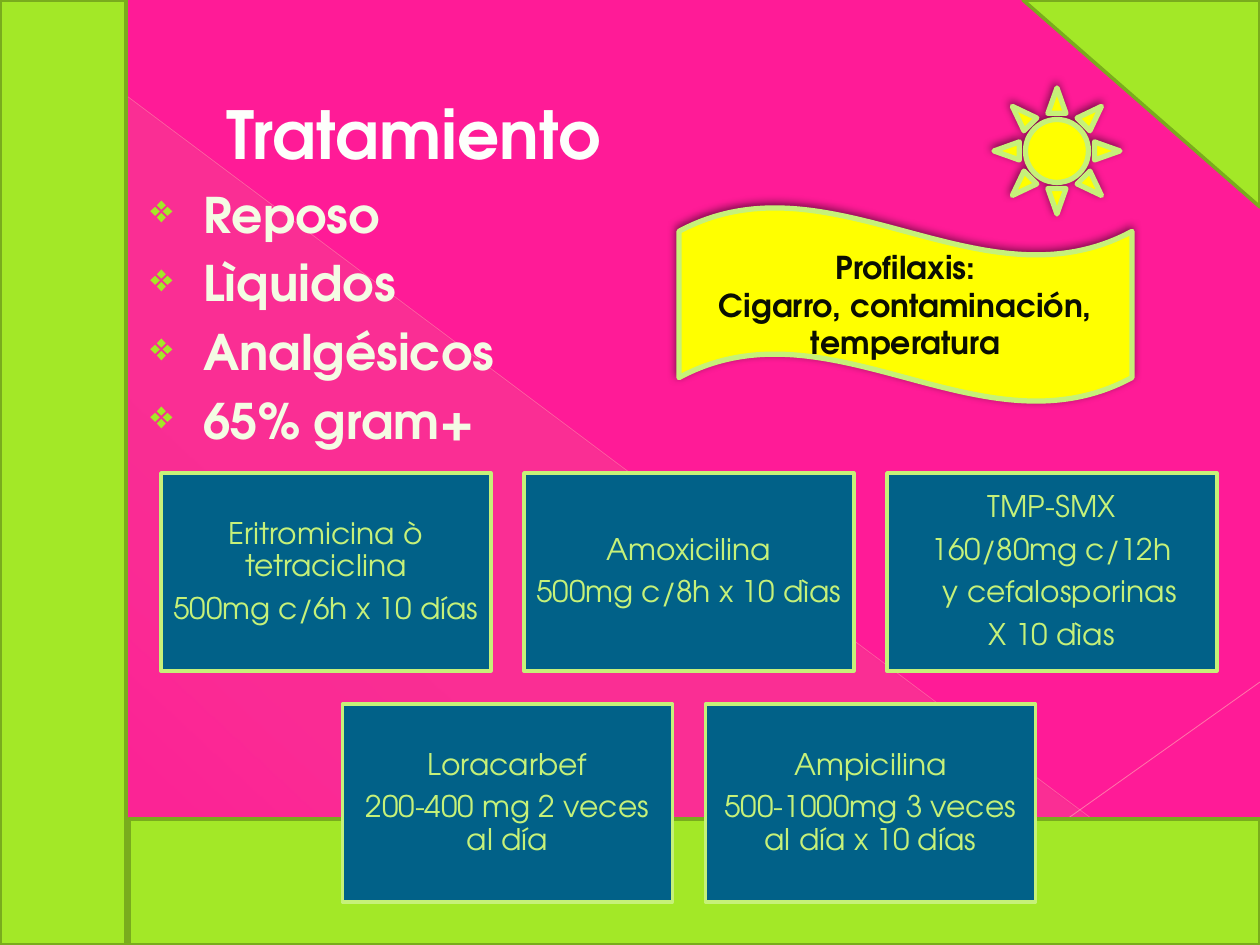
from dataclasses import dataclass

from lxml.etree import SubElement
from pptx import Presentation
from pptx.dml.color import RGBColor
from pptx.enum.shapes import MSO_CONNECTOR, MSO_SHAPE
from pptx.enum.text import MSO_ANCHOR, PP_ALIGN
from pptx.oxml.ns import qn
from pptx.util import Emu, Pt


@dataclass(frozen=True)
class Theme:
    font: str = "TeX Gyre Adventor"
    background: str = "FF1B97"
    green: str = "A3E827"
    green_edge: str = "79AC1D"
    pale_green: str = "C6F179"
    yellow: str = "FFFF00"
    blue: str = "016188"
    title: str = "FDFFFC"
    body: str = "F4FCE4"
    dark: str = "0A0E02"
    title_size: float = 37.8
    body_size: int = 28
    note_size: int = 18
    card_size: int = 17


THEME = Theme()
SLIDE_BOX = (0, 0, 1260, 945)
TREATMENTS = ["Reposo", "Lìquidos", "Analgésicos", "65% gram+"]
DRUGS = [
    [
        ["Eritromicina ò tetraciclina", "500mg c/6h x 10 días"],
        ["Amoxicilina", "500mg c/8h x 10 dìas"],
        ["TMP-SMX", "160/80mg c/12h", "y cefalosporinas", "X 10 dìas"],
    ],
    [
        ["Loracarbef", "200-400 mg 2 veces al día"],
        ["Ampicilina", "500-1000mg 3 veces al día x 10 días"],
    ],
]


def px(length):
    return Emu(round(length * 914400 / 126))


def rgb(color):
    return RGBColor.from_string(color)


def add_element(parent, tag, **attributes):
    element = SubElement(parent, qn(tag))
    for name, value in attributes.items():
        element.set(name, str(value))
    return element


def add_color(parent, color, opacity):
    color_element = add_element(parent, "a:srgbClr", val=color)
    add_element(color_element, "a:alpha", val=opacity * 1000)


def add_shape(slide, kind, box, fill, edge, width):
    shape = slide.shapes.add_shape(kind, *map(px, box))
    shape.shadow.inherit = False
    shape.fill.solid()
    shape.fill.fore_color.rgb = rgb(fill)
    shape.line.color.rgb = rgb(edge)
    shape.line.width = Pt(width)
    return shape


def add_shadow(shape):
    effects = shape._element.spPr.find(qn("a:effectLst"))
    shadow = add_element(effects, "a:outerShdw", blurRad=Pt(5), dist=Pt(2),
                         dir=245 * 60000, algn="tl", rotWithShape=0)
    add_color(shadow, "000000", 50)


def write_lines(shape, lines, size, color, bold=False, align=PP_ALIGN.LEFT,
                anchor=MSO_ANCHOR.MIDDLE):
    frame = shape.text_frame
    frame.word_wrap = True
    frame.vertical_anchor = anchor
    for index, line in enumerate(lines):
        paragraph = frame.add_paragraph() if index else frame.paragraphs[0]
        paragraph.text = line
        paragraph.alignment = align
        paragraph.font.name = THEME.font
        paragraph.font.size = Pt(size)
        paragraph.font.bold = bold
        paragraph.font.color.rgb = rgb(color)
    return frame.paragraphs


def set_indent(paragraph, margin, first_line=0):
    properties = paragraph._p.get_or_add_pPr()
    properties.set("marL", str(px(margin)))
    properties.set("indent", str(px(first_line)))
    return properties


def add_hairline(slide, points, color, width, opacity):
    line = slide.shapes.add_connector(MSO_CONNECTOR.STRAIGHT, *map(px, points))
    line.line.width = Pt(width)
    line.line.color.rgb = rgb(color)
    color_element = next(line._element.spPr.iter(qn("a:srgbClr")))
    add_element(color_element, "a:alpha", val=opacity * 1000)
    add_element(line._element.spPr, "a:effectLst")


def draw_backdrop(slide, box):
    left, top, width, height = box
    right, bottom = left + width, top + height
    slide.background.fill.solid()
    slide.background.fill.fore_color.rgb = rgb(THEME.background)

    glow = add_shape(slide, MSO_SHAPE.RIGHT_TRIANGLE,
                     (left + 1, top + 2, width - 2, height - 2),
                     THEME.pale_green, THEME.pale_green, 1)
    glow.line.fill.background()
    glow.fill.gradient()
    gradient = glow._element.spPr.find(qn("a:gradFill"))
    for child in list(gradient):
        gradient.remove(child)
    stops = add_element(gradient, "a:gsLst")
    for position, opacity in ((0, 10), (70, 8), (100, 1)):
        stop = add_element(stops, "a:gs", pos=position * 1000)
        add_color(stop, THEME.pale_green, opacity)
    add_element(gradient, "a:lin", ang=133 * 60000, scaled=0)

    add_hairline(slide, (left, top + 1, right - 1, bottom - 1), "FFDBB8", 0.39, 35)
    add_hairline(slide, (right, top + 682, left + 891, bottom - 1), "FFDEC0", 0.47, 45)


def draw_frame(slide, box):
    left, top, width, height = box
    band = 126
    edge = (THEME.green, THEME.green_edge, 2)
    add_shape(slide, MSO_SHAPE.RECTANGLE, (left, top, band, height), *edge)
    add_shape(slide, MSO_SHAPE.RECTANGLE,
              (left + band + 3, top + height - band, width - band - 3, band), *edge)
    corner = add_shape(slide, MSO_SHAPE.RIGHT_TRIANGLE,
                       (left + width - 237, top, 237, 207), *edge)
    corner.rotation = 180


def draw_title(slide, box):
    title = slide.shapes.add_textbox(*map(px, box))
    write_lines(title, ["Tratamiento"], THEME.title_size, THEME.title, bold=True)


def draw_treatments(slide, box):
    body = slide.shapes.add_textbox(*map(px, box))
    paragraphs = write_lines(body, TREATMENTS, THEME.body_size, THEME.body,
                             bold=True, anchor=MSO_ANCHOR.TOP)
    for paragraph in paragraphs:
        paragraph.space_after = Pt(5.6)
        properties = set_indent(paragraph, 62, -53)
        color = add_element(properties, "a:buClr")
        add_element(color, "a:srgbClr", val=THEME.green)
        add_element(properties, "a:buSzPct", val=80000)
        add_element(properties, "a:buChar", char="❖")


def draw_prevention(slide, box):
    left, top, width, height = box
    style = (THEME.yellow, THEME.pale_green, 3)
    sun = add_shape(slide, MSO_SHAPE.SUN, (left + 315, top, 126, 126), *style)
    wave = add_shape(slide, MSO_SHAPE.WAVE,
                     (left, top + 119, width, height - 119), *style)
    for shape in (sun, wave):
        add_shadow(shape)
    write_lines(wave, ["Profilaxis:", "Cigarro, contaminación, temperatura"],
                THEME.note_size, THEME.dark, bold=True, align=PP_ALIGN.CENTER)


def draw_card(slide, box, lines):
    card = add_shape(slide, MSO_SHAPE.RECTANGLE, box, THEME.blue, THEME.pale_green, 2)
    frame = card.text_frame
    frame.margin_left = frame.margin_right = px(9)
    frame.margin_top = frame.margin_bottom = px(9)
    paragraphs = write_lines(card, lines, THEME.card_size, THEME.pale_green,
                             align=PP_ALIGN.CENTER)
    for paragraph in paragraphs:
        paragraph.line_spacing = 0.9
        paragraph.space_after = Pt(6)
        if paragraph.text == "y cefalosporinas":
            set_indent(paragraph, 16)


def draw_drugs(slide, box):
    left, top, width, height = box
    gap = 33
    card_width = (width - 2 * gap) / 3
    card_height = (height - gap) / 2
    for row, cards in enumerate(DRUGS):
        row_width = len(cards) * (card_width + gap) - gap
        row_left = left + (width - row_width) / 2
        for column, lines in enumerate(cards):
            draw_card(slide, (row_left + column * (card_width + gap),
                              top + row * (card_height + gap),
                              card_width, card_height), lines)


def main():
    presentation = Presentation()
    presentation.slide_width, presentation.slide_height = map(px, SLIDE_BOX[2:])
    slide = presentation.slides.add_slide(presentation.slide_layouts[6])
    draw_backdrop(slide, SLIDE_BOX)
    draw_title(slide, (214, 93, 1016, 80))
    draw_treatments(slide, (129, 178, 540, 290))
    draw_frame(slide, SLIDE_BOX)
    draw_drugs(slide, (161, 473, 1056, 429))
    draw_prevention(slide, (679, 88, 453, 314))
    presentation.save("out.pptx")


if __name__ == "__main__":
    main()
